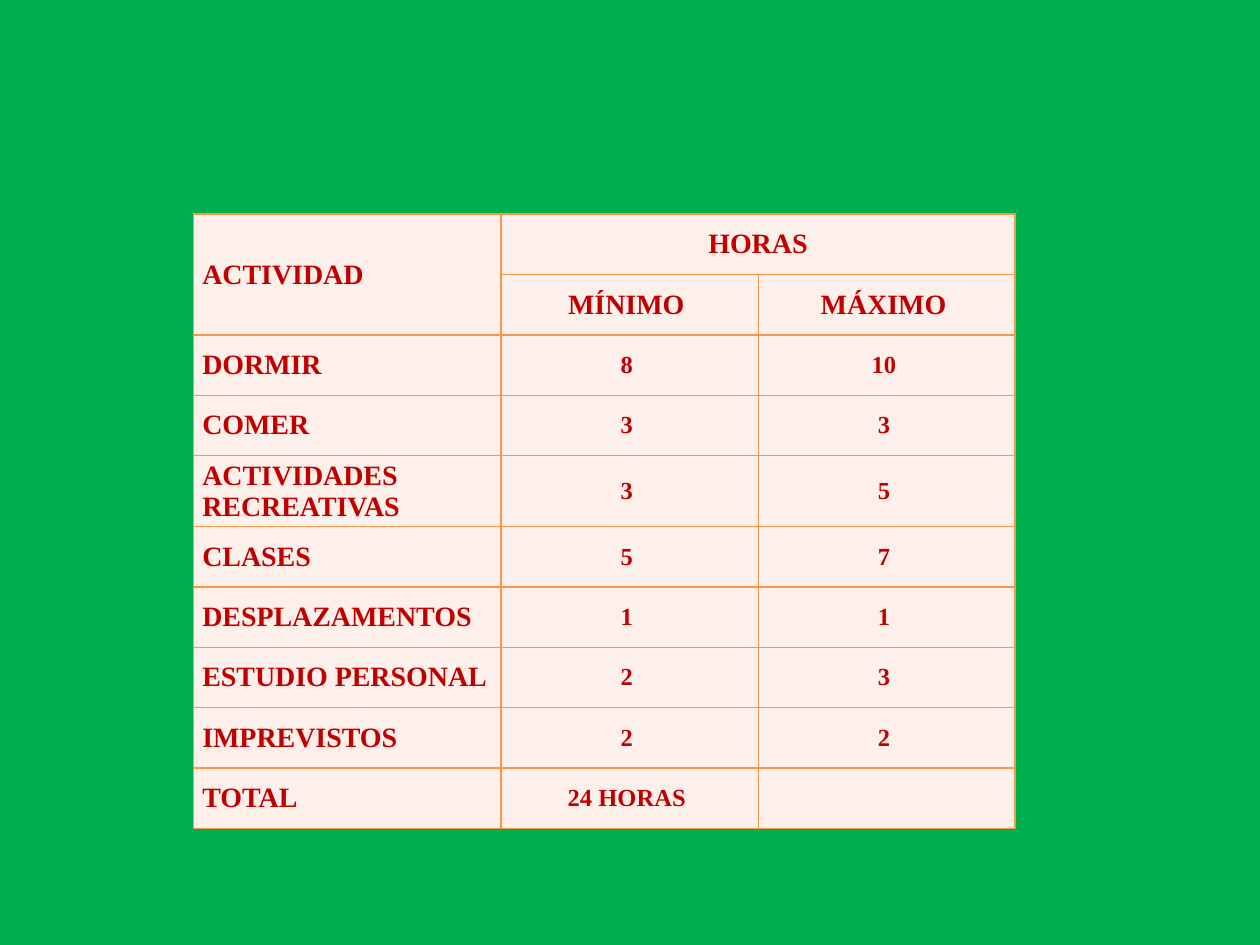
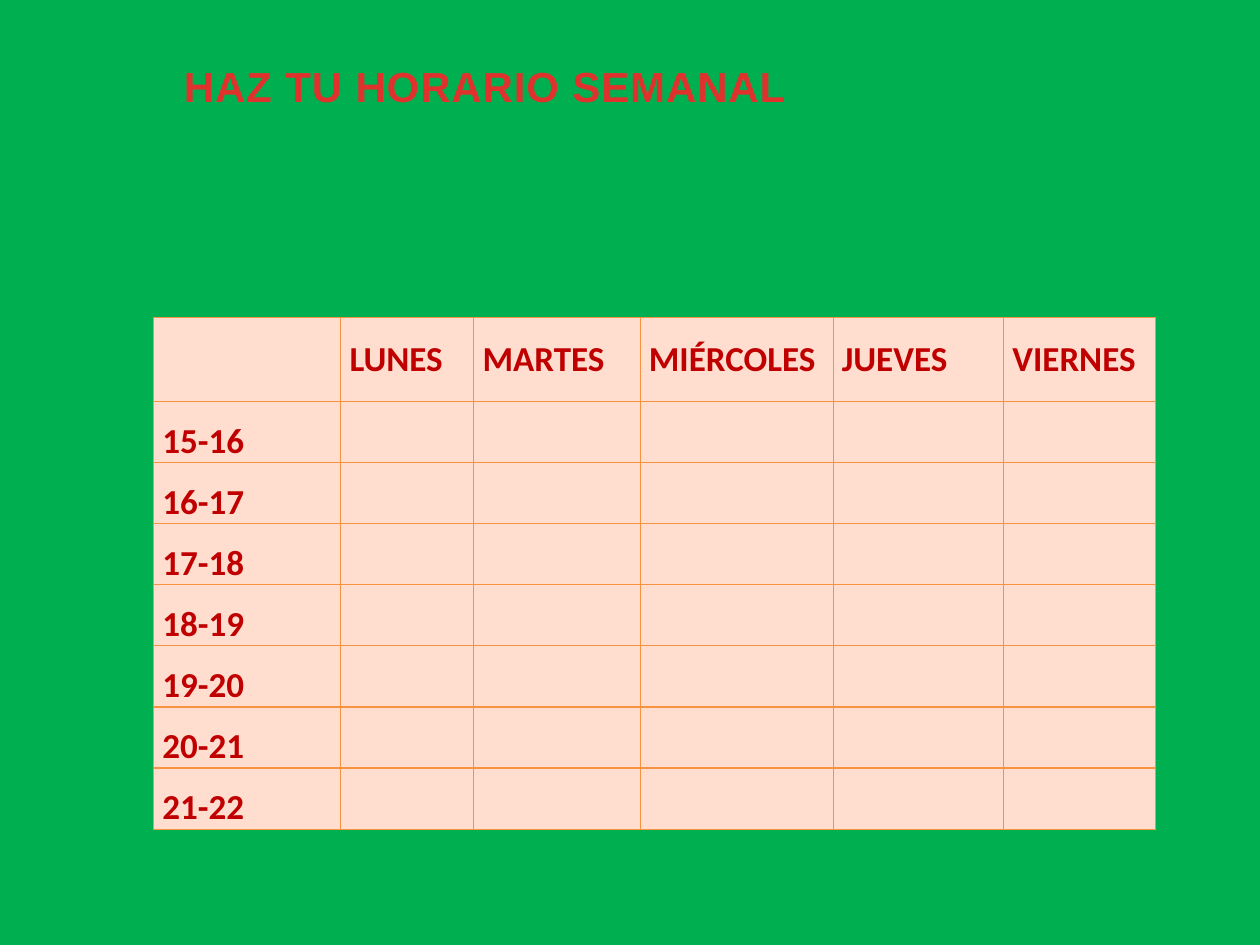
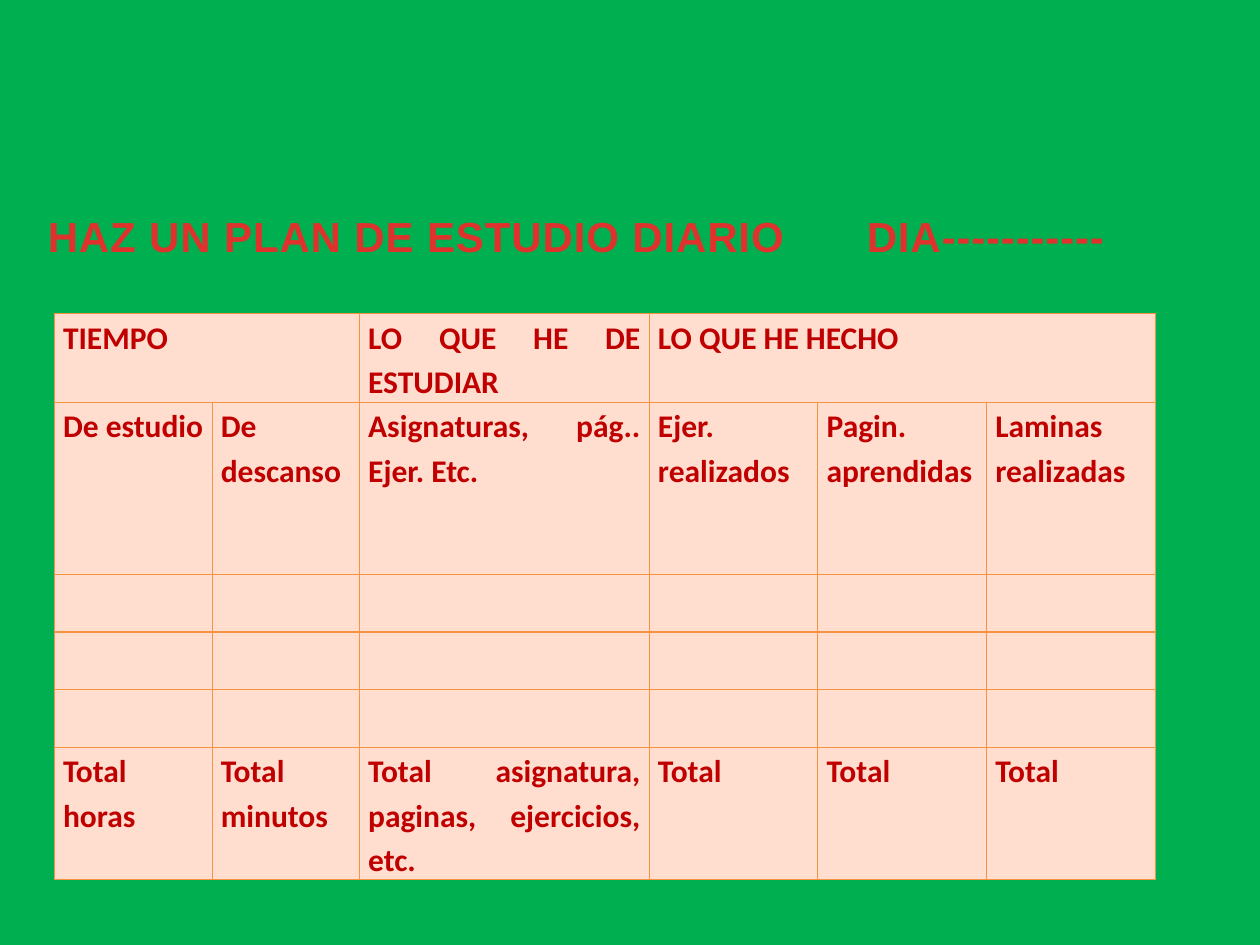
from dataclasses import dataclass
from typing import Optional

from lxml.etree import SubElement
from pptx import Presentation
from pptx.dml.color import RGBColor
from pptx.enum.text import MSO_ANCHOR, MSO_AUTO_SIZE, PP_ALIGN
from pptx.oxml.ns import qn
from pptx.util import Pt

GREEN = RGBColor(0x00, 0xB0, 0x50)
DARK_RED = RGBColor(0xC0, 0x00, 0x00)
TITLE_TOP_RED = RGBColor(0xE0, 0x32, 0x2D)
TITLE_BOTTOM_RED = RGBColor(0xA2, 0x20, 0x1C)
PALE_PINK = RGBColor(0xFD, 0xEF, 0xE9)
PEACH = RGBColor(0xFF, 0xDD, 0xCF)
ORANGE = RGBColor(0xF7, 0x96, 0x46)
DEEP_ORANGE = RGBColor(0xF6, 0x92, 0x40)

HOURS = [
    ("DORMIR", "8 ", "10 "),
    ("COMER", "3 ", "3 "),
    ("ACTIVIDADES RECREATIVAS", "3 ", "5 "),
    ("CLASES", "5 ", "7 "),
    ("DESPLAZAMENTOS", "1 ", "1 "),
    ("ESTUDIO PERSONAL", "2 ", "3 "),
    ("IMPREVISTOS", "2 ", "2 "),
    ("TOTAL", "24 HORAS ", ""),
]
DAYS = ["LUNES ", "MARTES ", "MIÉRCOLES ", "JUEVES ", "VIERNES "]
PLAN_HEADINGS = ["TIEMPO", "", "LO QUE HE DE ESTUDIAR", "LO QUE HE HECHO", "", ""]
PLAN_COLUMNS = [
    "De estudio",
    "De descanso",
    "Asignaturas, pág.. Ejer. Etc.",
    "Ejer. realizados",
    "Pagin. aprendidas",
    "Laminas realizadas",
]
PLAN_TOTALS = [
    "Total horas",
    "Total minutos",
    "Total asignatura, paginas, ejercicios, etc.",
    "Total",
    "Total",
    "Total",
]


@dataclass
class TableStyle:
    fill: RGBColor
    border: RGBColor
    border_width: float
    font: str
    size: float
    alignment: PP_ALIGN
    anchor: MSO_ANCHOR
    line_spacing: Optional[float] = None
    space_after: float = 0


HOURS_STYLE = TableStyle(PALE_PINK, ORANGE, 1, "Times New Roman", 16,
                         PP_ALIGN.LEFT, MSO_ANCHOR.MIDDLE)
WEEK_STYLE = TableStyle(PEACH, DEEP_ORANGE, 0.75, "Calibri", 20,
                        PP_ALIGN.JUSTIFY, MSO_ANCHOR.BOTTOM)
PLAN_STYLE = TableStyle(PEACH, DEEP_ORANGE, 0.75, "Calibri", 18,
                        PP_ALIGN.JUSTIFY, MSO_ANCHOR.TOP, 1.15, 10)


def add_green_slide(presentation):
    slide = presentation.slides.add_slide(presentation.slide_layouts[6])
    slide.background.fill.solid()
    slide.background.fill.fore_color.rgb = GREEN
    return slide


def add_title(slide, text, left, top, width):
    shape = slide.shapes.add_textbox(Pt(left), Pt(top), Pt(width), Pt(36))
    text_frame = shape.text_frame
    text_frame.word_wrap = True
    text_frame.auto_size = MSO_AUTO_SIZE.SHAPE_TO_FIT_TEXT
    text_frame.vertical_anchor = MSO_ANCHOR.MIDDLE
    text_frame.text = text
    paragraph = text_frame.paragraphs[0]
    paragraph.alignment = PP_ALIGN.JUSTIFY
    for run in paragraph.runs:
        font = run.font
        font.name = "Arial"
        font.size = Pt(24)
        font.bold = True
        font.fill.gradient()
        font.fill.gradient_angle = 270
        stops = [(0.25, TITLE_TOP_RED), (1, TITLE_BOTTOM_RED)]
        for stop, (position, color) in zip(font.fill.gradient_stops, stops):
            stop.position = position
            stop.color.rgb = color
        run._r.get_or_add_rPr().set("spc", "50")


def set_borders(cell, color, width):
    properties = cell._tc.get_or_add_tcPr()
    for index, side in enumerate(("lnL", "lnR", "lnT", "lnB")):
        line = SubElement(properties, qn(f"a:{side}"), w=str(Pt(width)))
        fill = SubElement(line, qn("a:solidFill"))
        SubElement(fill, qn("a:srgbClr"), val=str(color))
        properties.insert(index, line)


def format_text(cell, style):
    cell.vertical_anchor = style.anchor
    for paragraph in cell.text_frame.paragraphs:
        paragraph.alignment = style.alignment
        paragraph.line_spacing = style.line_spacing
        paragraph.space_after = Pt(style.space_after)
        for run in paragraph.runs:
            run.font.name = style.font
            run.font.size = Pt(style.size)
            run.font.bold = True
            run.font.color.rgb = DARK_RED


def add_grid(slide, left, top, widths, heights, rows, style):
    frame = slide.shapes.add_table(len(rows), len(widths), Pt(left), Pt(top),
                                   Pt(sum(widths)), Pt(sum(heights)))
    table = frame.table
    table.first_row = False
    table.horz_banding = False
    for column, width in zip(table.columns, widths):
        column.width = Pt(width)
    for row, height, texts in zip(table.rows, heights, rows):
        row.height = Pt(height)
        for cell, text in zip(row.cells, texts):
            cell.margin_left = cell.margin_right = Pt(5)
            cell.margin_top = cell.margin_bottom = Pt(0)
            cell.fill.solid()
            cell.fill.fore_color.rgb = style.fill
            set_borders(cell, style.border, style.border_width)
            cell.text_frame.text = text
            format_text(cell, style)
    return table


def build_hours_slide(presentation):
    slide = add_green_slide(presentation)
    rows = [("ACTIVIDAD", "HORAS", ""), ("", "MÍNIMO ", "MÁXIMO ")] + HOURS
    heights = [40.5 if name == "ACTIVIDADES RECREATIVAS" else 34.5
               for name, _, _ in rows]
    table = add_grid(slide, 110.6, 122.4, [175.6, 147.4, 146.6], heights,
                     rows, HOURS_STYLE)
    for row_index in range(len(rows)):
        for column_index in (1, 2):
            cell = table.cell(row_index, column_index)
            for paragraph in cell.text_frame.paragraphs:
                paragraph.alignment = PP_ALIGN.CENTER
                for run in paragraph.runs:
                    run.font.size = Pt(16 if row_index < 2 else 14)
    table.cell(0, 0).merge(table.cell(1, 0))
    table.cell(0, 1).merge(table.cell(0, 2))


def build_week_slide(presentation):
    slide = add_green_slide(presentation)
    rows = [[""] + DAYS]
    rows += [[f"{hour}-{hour + 1} "] + [""] * len(DAYS) for hour in range(15, 22)]
    table = add_grid(slide, 87.8, 181.5, [107, 76, 95, 110.3, 97.5, 87],
                     [48] + [34.9] * 7, rows, WEEK_STYLE)
    for cell in table.rows[0].cells:
        cell.vertical_anchor = MSO_ANCHOR.MIDDLE
    add_title(slide, "HAZ TU HORARIO SEMANAL", 98, 31, 504.7)


def build_plan_slide(presentation):
    slide = add_green_slide(presentation)
    blank_rows = [[""] * len(PLAN_COLUMNS)] * 3
    rows = [PLAN_HEADINGS, PLAN_COLUMNS, *blank_rows, PLAN_TOTALS]
    table = add_grid(slide, 31, 179.3, [90.2, 84.2, 165.6] + [96.4] * 3,
                     [50.5, 98.5] + [32.9] * 3 + [75.8], rows, PLAN_STYLE)
    table.cell(0, 0).merge(table.cell(0, 1))
    table.cell(0, 3).merge(table.cell(0, 5))
    add_title(slide, "HAZ UN PLAN DE ESTUDIO DIARIO\t\tDIA-----------",
              20.2, 116.9, 654.5)


def main():
    presentation = Presentation()
    presentation.slide_width = Pt(720)
    presentation.slide_height = Pt(540)
    build_hours_slide(presentation)
    build_week_slide(presentation)
    build_plan_slide(presentation)
    presentation.save("out.pptx")


if __name__ == "__main__":
    main()
